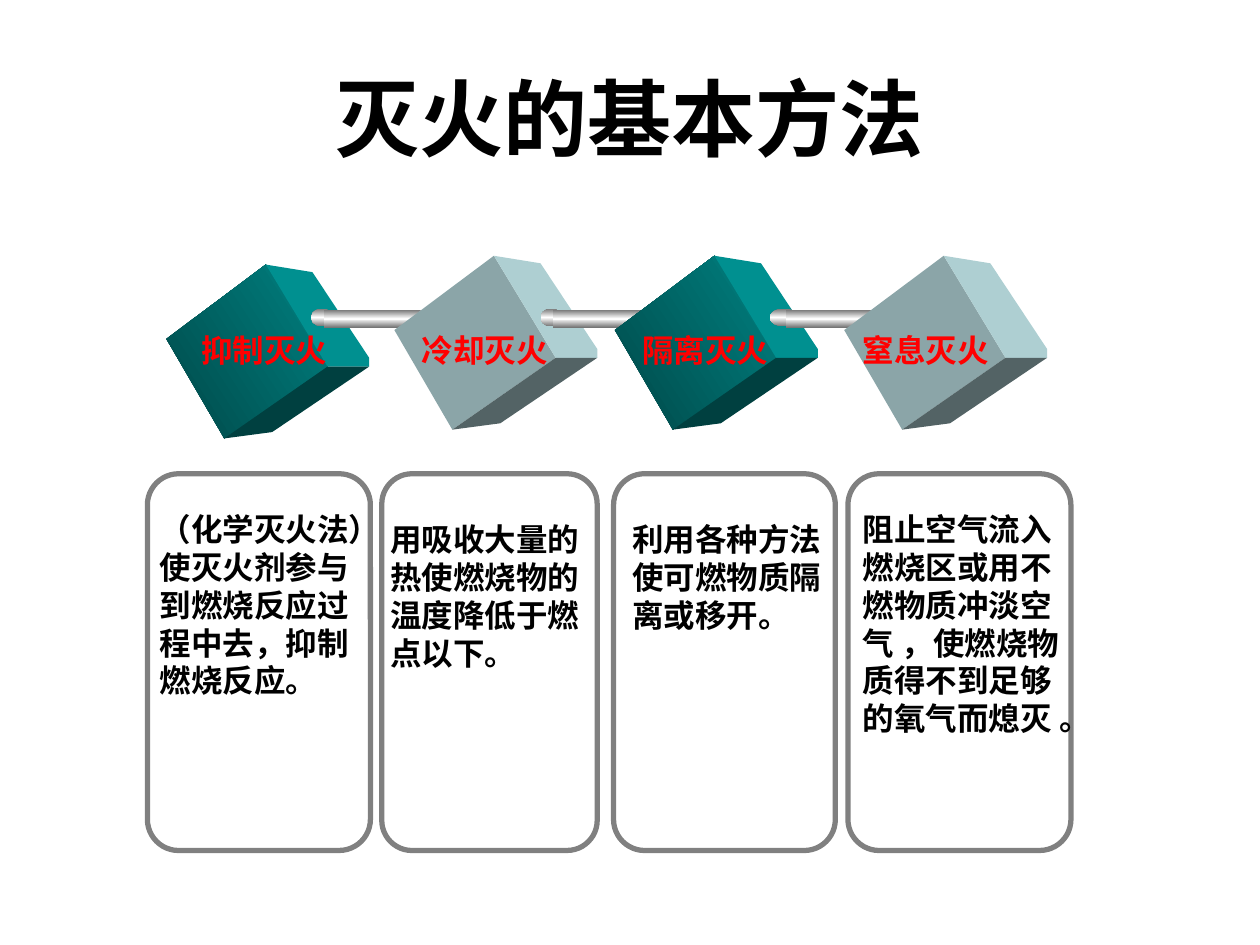
from dataclasses import dataclass

from lxml import etree
from pptx import Presentation
from pptx.dml.color import RGBColor
from pptx.enum.lang import MSO_LANGUAGE_ID
from pptx.enum.shapes import MSO_SHAPE
from pptx.enum.text import MSO_ANCHOR, PP_ALIGN
from pptx.oxml.ns import qn
from pptx.util import Inches, Pt

ROUND_RECT = MSO_SHAPE.ROUNDED_RECTANGLE
RECT = MSO_SHAPE.RECTANGLE
OVAL = MSO_SHAPE.OVAL
LEFT, CENTER = PP_ALIGN.LEFT, PP_ALIGN.CENTER
TOP, MIDDLE = MSO_ANCHOR.TOP, MSO_ANCHOR.MIDDLE
CHINESE = MSO_LANGUAGE_ID.SIMPLIFIED_CHINESE


@dataclass(frozen=True)
class Theme:
    font: str = "Arial"
    title_size: int = 48
    body_size: int = 18
    text: str = "000000"
    label: str = "FF0000"
    frame: str = "808080"
    rim: str = "FFFFFF"
    teal: tuple = (("004848", "008282"), ("009090",), ("004040",))
    pale: tuple = (("8BA5A8",), ("AECFD2",), ("536365",))
    rod: tuple = ("767676", "FFFFFF", "767676")
    tip: tuple = ("B6B6B6", "FFFFFF", "B6B6B6")


CUBE_FACES = (
    ((0, 0.59), (0.79, 0), (1.28, 0.81), (0.46, 1.38)),
    ((0.79, 0), (1.16, 0.06), (1.61, 0.74), (1.61, 0.81), (1.28, 0.81)),
    ((1.28, 0.81), (1.61, 0.81), (0.84, 1.33), (0.46, 1.38)),
)


class SlideBuilder:
    def __init__(self, slide, theme):
        self.s = slide
        self.theme = theme

    def paint(self, sp, colors, angle=90):
        sp.shadow.inherit = False
        sp.line.fill.background()
        if len(colors) == 1:
            sp.fill.solid()
            sp.fill.fore_color.rgb = RGBColor.from_string(colors[0])
            return
        sp.fill.gradient()
        sp.fill.gradient_angle = angle
        stops = next(sp._element.iter(qn("a:gsLst")))
        for stop in list(stops):
            stops.remove(stop)
        for i, color in enumerate(colors):
            position = i * 100000 // (len(colors) - 1)
            stop = etree.SubElement(stops, qn("a:gs"), pos=str(position))
            etree.SubElement(stop, qn("a:srgbClr"), val=color)

    def outline(self, sp, color, width):
        sp.line.color.rgb = RGBColor.from_string(color)
        sp.line.width = Pt(width)

    def shape(self, kind, *box):
        return self.s.shapes.add_shape(kind, *map(Inches, box))

    def text(self, lines, box, size, color, align=LEFT, anchor=TOP, wrap=False):
        tf = self.s.shapes.add_textbox(*map(Inches, box)).text_frame
        tf.word_wrap = wrap
        tf.vertical_anchor = anchor
        style = {"name": self.theme.font, "size": Pt(size), "bold": True,
                 "language_id": CHINESE}
        for i, line in enumerate(lines):
            p = tf.add_paragraph() if i else tf.paragraphs[0]
            p.alignment = align
            r = p.add_run()
            r.text = line
            for name, value in style.items():
                setattr(r.font, name, value)
            r.font.color.rgb = RGBColor.from_string(color)

    def frame(self, left, width):
        sp = self.shape(ROUND_RECT, left, 3.76, width, 2.99)
        sp.adjustments[0] = 0.14
        sp.shadow.inherit = False
        sp.fill.background()
        self.outline(sp, self.theme.frame, 3)

    def cube(self, left, top, palette):
        for face, colors in zip(CUBE_FACES, palette):
            points = [(Inches(left + x), Inches(top + y)) for x, y in face]
            fb = self.s.shapes.build_freeform(*points[0])
            fb.add_line_segments(points[1:], close=True)
            self.paint(fb.convert_to_shape(), colors, angle=33)

    def rod(self, left, stretch):
        t = self.theme
        parts = (
            (OVAL, 0, 2.45, 0.17, 0.14, t.rod),
            (RECT, 0.1, 2.46, 0.82, 0.14, t.rod),
            (OVAL, 0.84, 2.46, 0.15, 0.13, t.tip),
            (OVAL, 0.92, 2.5, 0.04, 0.04, t.tip),
        )
        shapes = []
        for kind, x, top, width, height, colors in parts:
            sp = self.shape(kind, left + x * stretch, top, width * stretch, height)
            self.paint(sp, colors)
            shapes.append(sp)
        self.outline(shapes[2], t.rim, 1)


def main():
    prs = Presentation()
    prs.slide_width, prs.slide_height = Inches(10), Inches(7.5)
    theme = Theme()
    b = SlideBuilder(prs.slides.add_slide(prs.slide_layouts[6]), theme)

    b.text(["灭火的基本方法"], (0.5, 0.3, 9, 1.25), theme.title_size, theme.text,
           CENTER, MIDDLE, wrap=True)

    for left, width in ((1.17, 1.77), (3.03, 1.71), (4.87, 1.76), (6.73, 1.77)):
        b.frame(left, width)

    cubes = ((1.32, 2.1), (3.13, 2.03), (4.88, 2.03), (6.7, 2.03))
    rods = ((2.47, 1), (4.29, 1), (6.11, 1.3))
    for i, (left, top) in enumerate(cubes):
        b.cube(left, top, theme.pale if i % 2 else theme.teal)
        if i < len(rods):
            b.rod(*rods[i])

    methods = (
        ("抑制灭火", (1.17, 4, 1.95, 1.61),
         ("（化学灭火法）", "使灭火剂参与", "到燃烧反应过", "程中去，抑制", "燃烧反应。")),
        ("冷却灭火", (3, 4.08, 1.7, 1.61),
         ("用吸收大量的", "热使燃烧物的", "温度降低于燃", "点以下。")),
        ("隔离灭火", (4.92, 4.08, 1.7, 1.31),
         ("利用各种方法", "使可燃物质隔", "离或移开。")),
        ("窒息灭火", (6.75, 4, 2.02, 2.22),
         ("阻止空气流入", "燃烧区或用不", "燃物质冲淡空", "气 ，使燃烧物",
          "质得不到足够", "的氧气而熄灭 。")),
    )
    for i, (name, box, lines) in enumerate(methods):
        b.text([name], (1.5 + 1.75 * i, 2.58, 1.21, 0.4), theme.body_size, theme.label)
        b.text(lines, box, theme.body_size, theme.text)

    prs.save("out.pptx")


if __name__ == "__main__":
    main()
